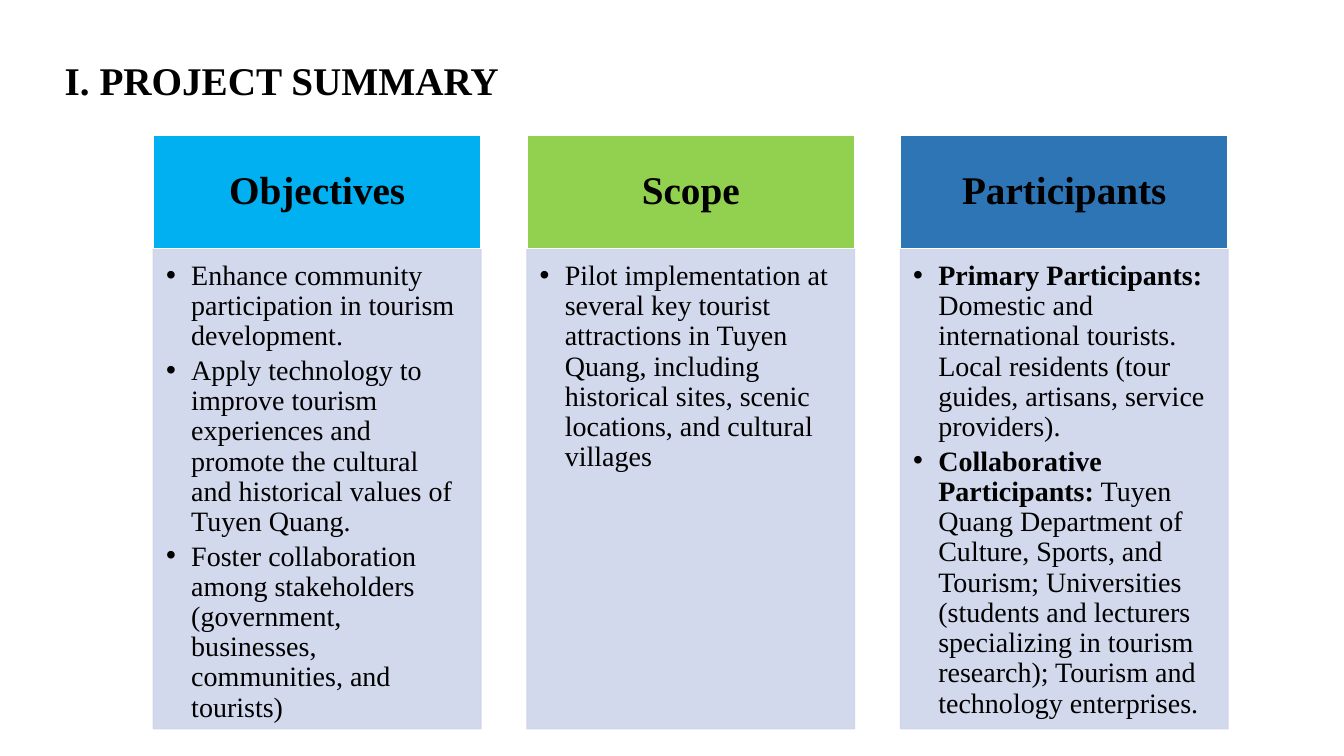
"""Build the project summary slide with three headed list columns."""
from dataclasses import dataclass

from lxml import etree
from pptx import Presentation
from pptx import util as u
from pptx.dml.color import RGBColor
from pptx.enum import shapes, text
from pptx.oxml.ns import qn


@dataclass(frozen=True)
class Theme:
    """Colours, font and type sizes."""
    font: str = "Times New Roman"
    ink: str = "000000"
    edge: str = "FFFFFF"
    panel: str = "CFD5EA"
    blue: str = "00B0F0"
    green: str = "92D050"
    navy: str = "2E75B6"
    head_size: int = 28
    list_size: int = 20


class SlideBuilder:
    """Hold the theme and the current slide."""

    def __init__(self, s, theme):
        """Keep the slide and its theme."""
        self.s, self.theme = s, theme

    def apply(self, obj, formats):
        """Set attributes from a dict of format values."""
        for name, value in formats.items():
            setattr(obj, name, value)

    def place(self, sp, box):
        """Move and size a shape, in points."""
        self.apply(sp, dict(zip(("left", "top", "width", "height"), map(u.Pt, box))))

    def frame(self, sp, margins, anchor, wrap=True):
        """Format a text frame and return it."""
        tf = sp.text_frame
        sides = ("margin_left", "margin_top", "margin_right", "margin_bottom")
        self.apply(tf, dict(zip(sides, map(u.Pt, margins))))
        self.apply(tf, {"auto_size": text.MSO_AUTO_SIZE.NONE, "word_wrap": wrap,
                        "vertical_anchor": anchor})
        return tf

    def paint(self, sp, fill, line, alpha=None):
        """Fill and outline a shape, optionally translucent."""
        sp.shadow.inherit = False
        sp.fill.solid()
        sp.fill.fore_color.rgb = RGBColor.from_string(fill)
        sp.line.color.rgb = RGBColor.from_string(line)
        sp.line.width = u.Pt(1)
        if alpha:
            for clr in list(sp._element.spPr.iter(qn("a:srgbClr"))):
                etree.SubElement(clr, qn("a:alpha"), val=str(alpha * 1000))

    def paragraph(self, p, runs, size, **formats):
        """Write (words, bold) runs into a paragraph."""
        self.apply(p, {"space_before": u.Pt(0), **formats})
        for words, bold in runs:
            r = p.add_run()
            r.text = words
            self.apply(r.font, {"name": self.theme.font, "size": u.Pt(size), "bold": bold})
            r.font.color.rgb = RGBColor.from_string(self.theme.ink)

    def title(self, words, box):
        """Write the slide title."""
        sp = self.s.shapes.title
        self.place(sp, box)
        tf = self.frame(sp, (7.2, 3.6, 7.2, 3.6), text.MSO_ANCHOR.TOP, wrap=False)
        self.paragraph(tf.paragraphs[0], [(words, True)], self.theme.head_size,
                       alignment=text.PP_ALIGN.LEFT, line_spacing=1.15, space_after=u.Pt(6))

    def header(self, words, box, fill):
        """Add a coloured column heading."""
        sp = self.s.shapes.add_shape(shapes.MSO_SHAPE.RECTANGLE, *map(u.Pt, box))
        self.paint(sp, fill, self.theme.edge)
        tf = self.frame(sp, (16, 9, 16, 9), text.MSO_ANCHOR.MIDDLE)
        self.paragraph(tf.paragraphs[0], [(words, True)], self.theme.head_size,
                       alignment=text.PP_ALIGN.CENTER, line_spacing=0.9)

    def bullets(self, idx, items, box):
        """Fill a body placeholder with a bulleted list."""
        sp = self.s.placeholders[idx]
        self.place(sp, box)
        self.paint(sp, self.theme.panel, self.theme.panel, alpha=90)
        tf = self.frame(sp, (9, 9, 11.5, 12), text.MSO_ANCHOR.TOP)
        for i, runs in enumerate(items):
            p = tf.add_paragraph() if i else tf.paragraphs[0]
            pPr = p._p.get_or_add_pPr()
            pPr.set("marL", str(u.Pt(18)))
            pPr.set("indent", str(-u.Pt(18)))
            etree.SubElement(pPr, qn("a:buFont"), typeface="Arial")
            etree.SubElement(pPr, qn("a:buChar"), char="•")
            self.paragraph(p, runs, self.theme.list_size, alignment=text.PP_ALIGN.LEFT,
                           line_spacing=0.9, space_after=u.Pt(3))

    def drop_empty(self):
        """Remove placeholders without text."""
        for sp in list(self.s.placeholders):
            if not sp.text_frame.text:
                sp._element.getparent().remove(sp._element)


def main():
    """Build and save the slide."""
    prs = Presentation()
    prs.slide_width, prs.slide_height = u.Pt(960), u.Pt(540)
    theme = Theme()
    slide = SlideBuilder(prs.slides.add_slide(prs.slide_layouts[4]), theme)
    slide.title("I. PROJECT SUMMARY", (39, 31.8, 327.6, 44))
    columns = [
        ("Objectives", theme.blue, 1, [
            [("Enhance community participation in tourism development.", False)],
            [("Apply technology to improve tourism experiences and promote the cultural "
              "and historical values of Tuyen Quang.", False)],
            [("Foster collaboration among stakeholders (government, businesses, "
              "communities, and tourists)", False)]]),
        ("Scope", theme.green, 2, [
            [("Pilot implementation at several key tourist attractions in Tuyen Quang, "
              "including historical sites, scenic locations, and cultural villages", False)]]),
        ("Participants", theme.navy, 4, [
            [("Primary Participants:", True),
             (" Domestic and international tourists. Local residents (tour guides, "
              "artisans, service providers).", False)],
            [("Collaborative Participants:", True),
             (" Tuyen Quang Department of Culture, Sports, and Tourism; Universities "
              "(students and lecturers specializing in tourism research); Tourism and "
              "technology enterprises.", False)]]),
    ]
    left, top, width, step, head_h, list_h = 109.6, 96.4, 234, 266.8, 81.2, 343
    for i, (name, fill, idx, items) in enumerate(columns):
        x = left + i * step
        slide.header(name, (x, top, width, head_h), fill)
        slide.bullets(idx, items, (x, top + head_h, width, list_h))
    slide.drop_empty()
    prs.save("out.pptx")


if __name__ == "__main__":
    main()
